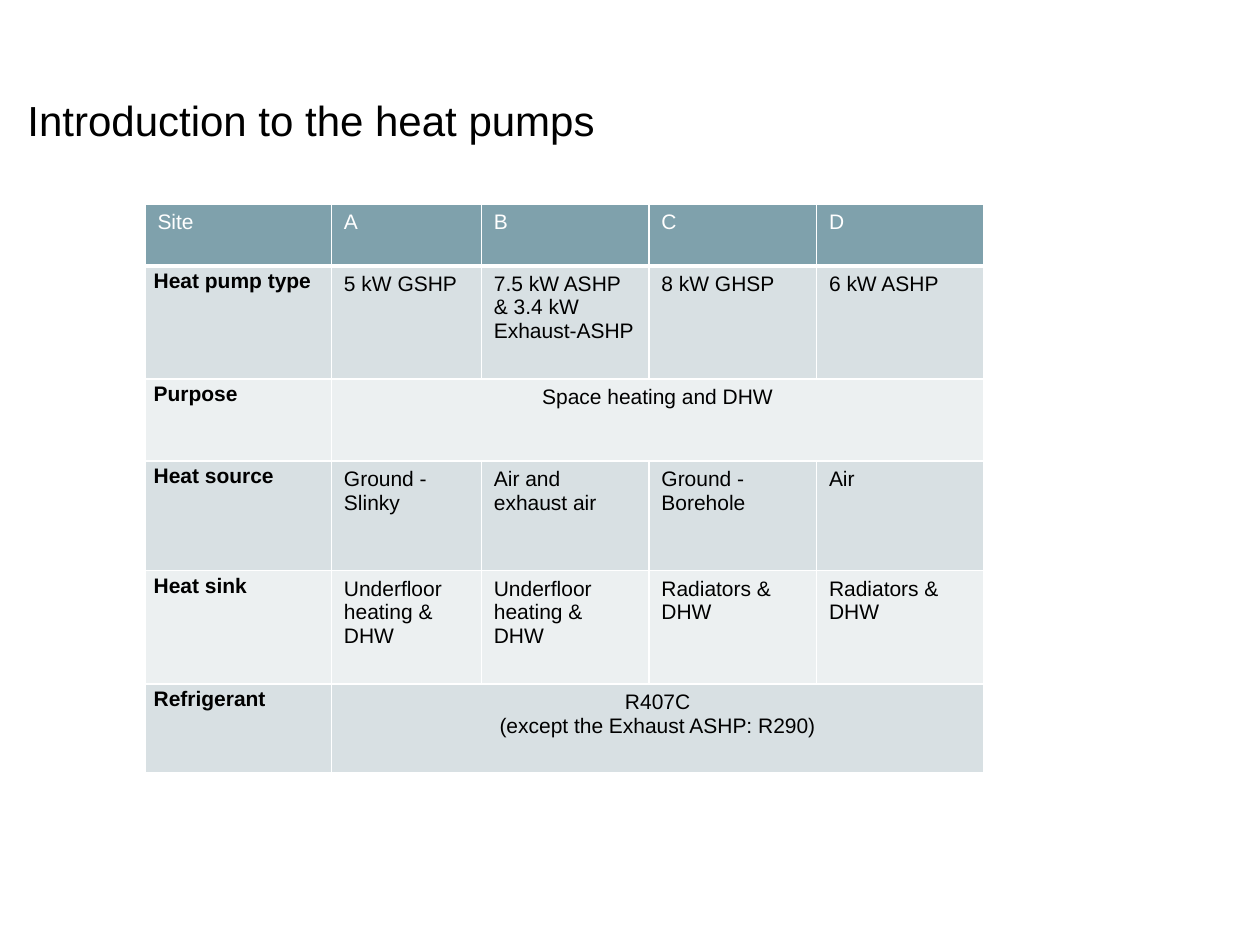
import lxml.etree
import pptx
import pptx.dml.color
import pptx.enum.text
import pptx.oxml.ns
import pptx.util
from pptx.util import Inches

TITLE = "Introduction to the heat pumps"
SITES = ["Site", "A", "B", "C", "D"]
# A single value after the label spans all the sites.
PROPERTIES = [
    ["Heat pump type", "5 kW GSHP", "7.5 kW ASHP & 3.4 kW Exhaust-ASHP", "8 kW GHSP", "6 kW ASHP"],
    ["Purpose", "Space heating and DHW"],
    ["Heat source", "Ground - Slinky", "Air and exhaust air", "Ground - Borehole", "Air"],
    ["Heat sink", "Underfloor heating & DHW", "Underfloor heating & DHW", "Radiators & DHW", "Radiators & DHW"],
    ["Refrigerant", "R407C\n(except the Exhaust ASHP: R290)"],
]
COLUMN_WIDTHS = [1.48, 1.19, 1.33, 1.33, 1.33]
ROW_HEIGHTS = [0.49, 0.9, 0.65, 0.87, 0.9, 0.7]

THEME = {
    "font": "Arial",
    "title_size": 24,
    "table_size": 12,
    "text": "000000",
    "header_text": "FFFFFF",
    "header_fill": "7FA1AC",
    "bands": ["D8E0E3", "ECF0F1"],
    "border": "FFFFFF",
}
LABEL_MARGINS = {
    "margin_left": Inches(0.07),
    "margin_right": Inches(0.07),
    "margin_top": 0,
    "margin_bottom": 0,
}
CENTER = pptx.enum.text.PP_ALIGN.CENTER


def set_attributes(target, values):
    for name, value in values.items():
        setattr(target, name, value)


def write_text(frame, text, size, color, bold=False, **paragraph_format):
    frame.text = text
    for paragraph in frame.paragraphs:
        set_attributes(paragraph, paragraph_format)
        for run in paragraph.runs:
            font_format = {"name": THEME["font"], "size": pptx.util.Pt(size), "bold": bold}
            set_attributes(run.font, font_format)
            run.font.color.rgb = pptx.dml.color.RGBColor.from_string(color)


def style_cell(cell, fill, bottom_width=1):
    """Give the cell its borders, then its fill, in the order the schema asks for."""
    properties = cell._tc.get_or_add_tcPr()
    qn = pptx.oxml.ns.qn
    for side, width in {"lnL": 1, "lnR": 1, "lnT": 1, "lnB": bottom_width}.items():
        line = lxml.etree.SubElement(properties, qn(f"a:{side}"), w=str(pptx.util.Pt(width)))
        solid = lxml.etree.SubElement(line, qn("a:solidFill"))
        lxml.etree.SubElement(solid, qn("a:srgbClr"), val=THEME["border"])
    cell.fill.solid()
    cell.fill.fore_color.rgb = pptx.dml.color.RGBColor.from_string(fill)


def add_title(slide):
    box = slide.shapes.add_textbox(Inches(0.12), Inches(0.7), Inches(5.67), Inches(0.5))
    box.text_frame.word_wrap = True
    write_text(box.text_frame, TITLE, THEME["title_size"], THEME["text"])


def add_heat_pump_table(slide):
    table = slide.shapes.add_table(
        len(ROW_HEIGHTS), len(COLUMN_WIDTHS), Inches(1.15), Inches(1.62),
        Inches(sum(COLUMN_WIDTHS)), Inches(sum(ROW_HEIGHTS)),
    ).table
    for column, width in zip(table.columns, COLUMN_WIDTHS):
        column.width = Inches(width)
    for row, height in zip(table.rows, ROW_HEIGHTS):
        row.height = Inches(height)

    size = THEME["table_size"]
    for column, site in enumerate(SITES):
        cell = table.cell(0, column)
        style_cell(cell, THEME["header_fill"], bottom_width=3)
        write_text(cell.text_frame, site, size, THEME["header_text"])

    for row, (label, *values) in enumerate(PROPERTIES, start=1):
        for column in range(len(SITES)):
            style_cell(table.cell(row, column), THEME["bands"][(row - 1) % 2])
        label_cell = table.cell(row, 0)
        set_attributes(label_cell, LABEL_MARGINS)
        write_text(label_cell.text_frame, label, size, THEME["text"], bold=True, line_spacing=1.15)

        shared = len(values) == 1
        if shared:
            table.cell(row, 1).merge(table.cell(row, len(SITES) - 1))
        for column, value in enumerate(values, start=1):
            write_text(table.cell(row, column).text_frame, value, size, THEME["text"],
                       alignment=CENTER if shared else None)


def main():
    presentation = pptx.Presentation()
    set_attributes(presentation, {"slide_width": Inches(10), "slide_height": Inches(7.5)})
    slide = presentation.slides.add_slide(presentation.slide_layouts[6])
    add_title(slide)
    add_heat_pump_table(slide)
    presentation.save("out.pptx")


if __name__ == "__main__":
    main()
